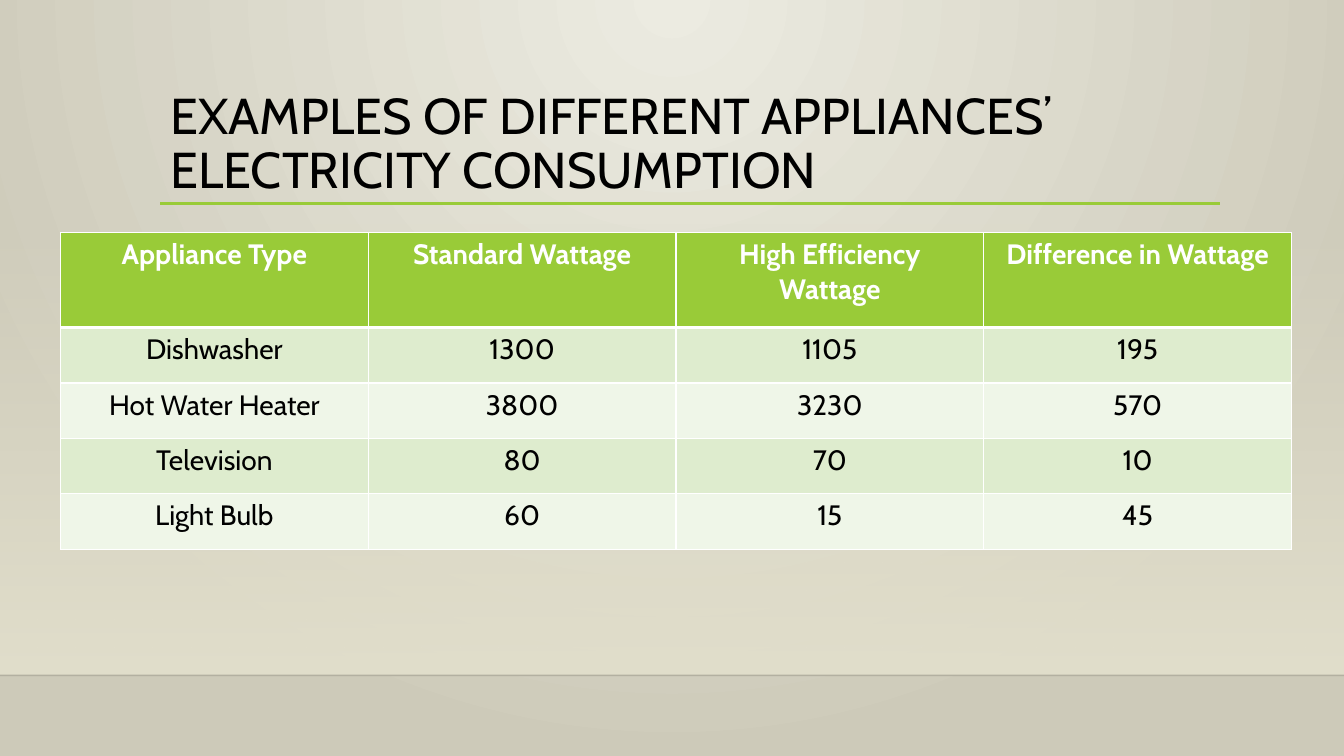
from dataclasses import dataclass

from lxml import etree
from pptx import Presentation
from pptx.dml.color import RGBColor
from pptx.enum.shapes import MSO_CONNECTOR as Connector, MSO_SHAPE as Shape
from pptx.enum.text import MSO_ANCHOR as Anchor, MSO_AUTO_SIZE as AutoSize, PP_ALIGN as Align
from pptx.oxml import parse_xml
from pptx.oxml.ns import nsdecls, qn
from pptx.util import Inches, Pt


@dataclass(frozen=True)
class Theme:
    font: str = "Cabin"
    title_size: int = 36
    table_size: int = 20
    text: str = "000000"
    white: str = "FFFFFF"
    green: str = "99CB38"
    band_dark: str = "DEECCE"
    band_light: str = "EFF6E8"
    glow: str = "ECEBE1"
    floor: str = "CDCAB9"
    wall: str = "E2DFCC"
    edge: str = "000001"


theme = Theme()


def set_gradient(element, start, end, start_alpha, direction):
    """Replace the element's first empty fill with a two-stop gradient."""
    empty = next(element.iter(qn("a:noFill")))
    gradient = parse_xml(
        f'<a:gradFill {nsdecls("a")} rotWithShape="1"><a:gsLst>'
        f'<a:gs pos="0"><a:srgbClr val="{start}"><a:alpha val="{start_alpha}"/></a:srgbClr></a:gs>'
        f'<a:gs pos="100000"><a:srgbClr val="{end}"/></a:gs>'
        f'</a:gsLst>{direction}</a:gradFill>'
    )
    empty.getparent().replace(empty, gradient)


def add_rule(page, left, right, y, color, width):
    rule = page.shapes.add_connector(
        Connector.STRAIGHT, Inches(left), Inches(y), Inches(right), Inches(y)
    )
    rule.line.color.rgb = RGBColor.from_string(color)
    rule.line.width = Pt(width)
    etree.SubElement(rule.element.spPr, qn("a:effectLst"))
    return rule


deck = Presentation()
deck.slide_width = Inches(13.33)
deck.slide_height = Inches(7.5)
page = deck.slides.add_slide(deck.slide_layouts[5])

# Background
page.background.fill.background()
set_gradient(
    page.element, theme.glow, theme.floor, 100000,
    '<a:path path="circle"><a:fillToRect l="43000" t="0" r="43000" b="100000"/></a:path>',
)
wall = page.shapes.add_shape(
    Shape.RECTANGLE, Inches(0), Inches(2.21), Inches(13.33), Inches(4.49)
)
wall.shadow.inherit = False
wall.fill.background()
wall.line.fill.background()
set_gradient(wall.element, theme.wall, theme.wall, 0, '<a:lin ang="5400000" scaled="0"/>')

floor_edge = add_rule(page, 0, 13.33, 6.7, theme.edge, 1)
edge_color = next(floor_edge.element.spPr.iter(qn("a:srgbClr")))
etree.SubElement(edge_color, qn("a:alpha"), val="20000")
add_rule(page, 1.59, 12.1, 2.02, theme.green, 2.5)

# Title
title = page.shapes.title
title.left, title.top, title.width, title.height = map(Inches, (1.59, 0.88, 10.5, 1.15))
frame = title.text_frame
frame.text = "EXAMPLES OF DIFFERENT APPLIANCES’ ELECTRICITY CONSUMPTION"
frame.word_wrap = True
frame.auto_size = AutoSize.NONE
frame.vertical_anchor = Anchor.BOTTOM
para = frame.paragraphs[0]
para.alignment = Align.LEFT
para.line_spacing = 0.9
para.font.name = theme.font
para.font.size = Pt(theme.title_size)
para.font.color.rgb = RGBColor.from_string(theme.text)

# Wattage table
rows = [
    ("Appliance Type", "Standard Wattage", "High Efficiency Wattage", "Difference in Wattage"),
    ("Dishwasher", "1300", "1105", "195"),
    ("Hot Water Heater", "3800", "3230", "570"),
    ("Television", "80", "70", "10"),
    ("Light Bulb", "60", "15", "45"),
]
table = page.shapes.add_table(
    len(rows), len(rows[0]), Inches(0.6), Inches(2.31), Inches(12.21), Inches(3.13)
).table

for row_index, values in enumerate(rows):
    is_header = row_index == 0
    table.rows[row_index].height = Inches(0.94 if is_header else 0.55)
    band = theme.band_dark if row_index % 2 else theme.band_light
    fill_color = theme.green if is_header else band
    for column_index, value in enumerate(values):
        cell = table.cell(row_index, column_index)
        cell.text = value
        para = cell.text_frame.paragraphs[0]
        para.alignment = Align.CENTER
        para.font.name = theme.font
        para.font.size = Pt(theme.table_size)
        para.font.bold = is_header
        para.font.color.rgb = RGBColor.from_string(theme.white if is_header else theme.text)
        properties = cell._tc.get_or_add_tcPr()
        for side in "LRTB":
            under_header = (row_index, side) in ((0, "B"), (1, "T"))
            properties.append(parse_xml(
                f'<a:ln{side} {nsdecls("a")} w="{Pt(3 if under_header else 1)}"><a:solidFill>'
                f'<a:srgbClr val="{theme.white}"/></a:solidFill></a:ln{side}>'
            ))
        cell.fill.solid()
        cell.fill.fore_color.rgb = RGBColor.from_string(fill_color)

deck.save("out.pptx")
